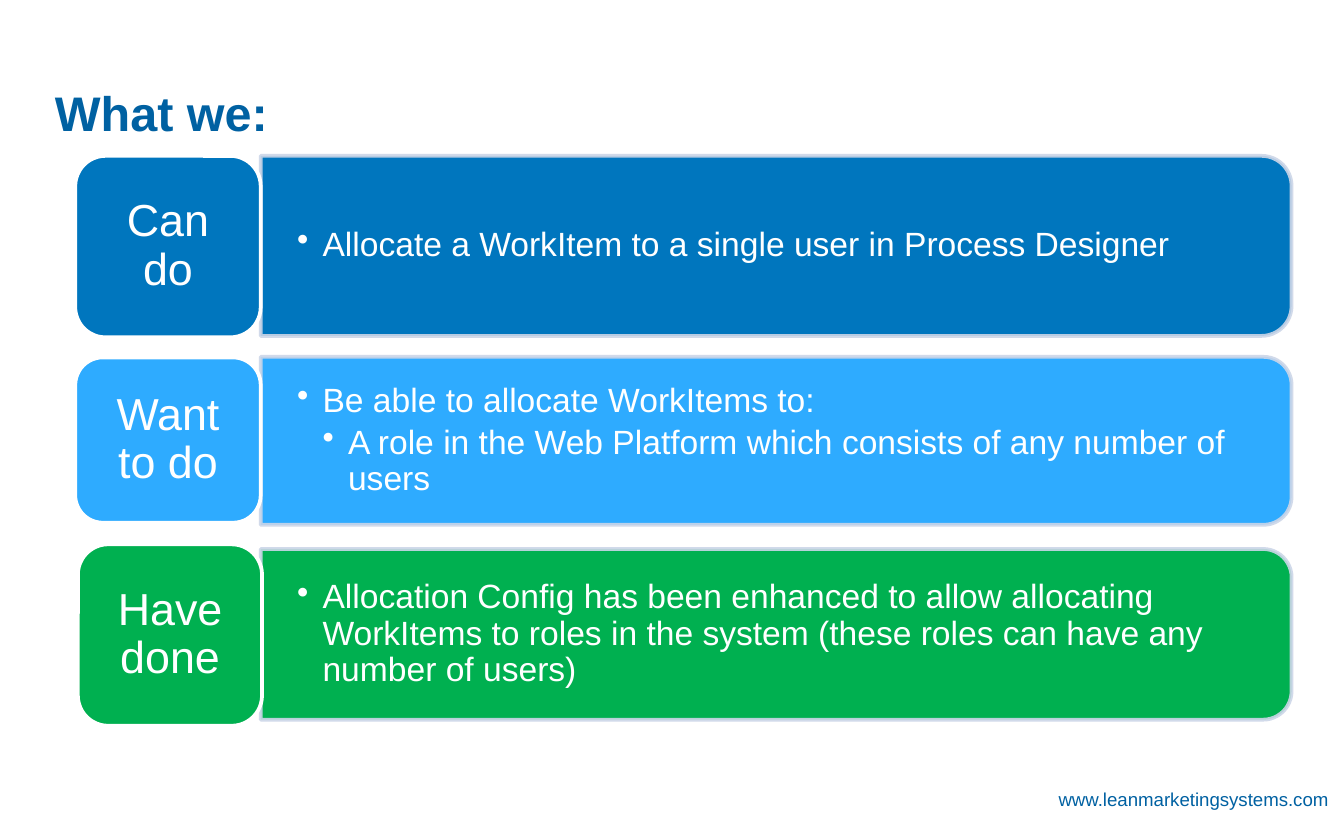
from dataclasses import dataclass

from lxml.etree import SubElement
from pptx import Presentation
from pptx.dml.color import RGBColor
from pptx.enum.shapes import MSO_SHAPE
from pptx.enum.text import MSO_ANCHOR, PP_ALIGN
from pptx.oxml.ns import qn
from pptx.util import Inches, Pt

NAVY = RGBColor(0x00, 0x61, 0xA2)
BLUE = RGBColor(0x00, 0x76, 0xBE)
SKY = RGBColor(0x2E, 0xAB, 0xFF)
GREEN = RGBColor(0x00, 0xB0, 0x50)
PALE = RGBColor(0xCC, 0xD6, 0xE8)
WHITE = RGBColor(0xFF, 0xFF, 0xFF)

BAR_LEFT, BAR_WIDTH = 1.94, 7.67
STEP = 0.19
INSET = 0.06


@dataclass
class Box:
    left: float
    top: float
    width: float
    height: float

    def shrink(self, gap: float) -> "Box":
        return Box(self.left + gap, self.top + gap, self.width - 2 * gap, self.height - 2 * gap)

    def sizes(self) -> list:
        return [Inches(n) for n in (self.left, self.top, self.width, self.height)]


@dataclass
class Row:
    name: str
    lines: list[str]
    color: RGBColor
    tab: Box
    middle: float
    height: float


def add_text(slide, box: Box, lines: list[str], *, size: int, color: RGBColor,
             bold: bool = False, align=PP_ALIGN.LEFT, anchor=MSO_ANCHOR.MIDDLE,
             wrap: bool = True, bullet: bool = False, tight: bool = False,
             pad: tuple[float, float] = (0.1, 0.05)) -> None:
    frame = slide.shapes.add_textbox(*box.sizes()).text_frame
    frame.word_wrap = wrap
    frame.vertical_anchor = anchor
    frame.margin_left = frame.margin_right = Inches(pad[0])
    frame.margin_top = frame.margin_bottom = Inches(pad[1])
    for level, line in enumerate(lines):
        para = frame.paragraphs[0] if level == 0 else frame.add_paragraph()
        para.alignment = align
        if tight:
            para.line_spacing = 0.9
        if bullet:
            para.level = level + 1
            para.space_after = Pt(3)
            props = para._p.get_or_add_pPr()
            props.set("marL", str(Inches(STEP * (level + 1))))
            props.set("indent", str(Inches(-STEP)))
            SubElement(props, qn("a:buChar"), char="•")
        run = para.add_run()
        run.text = line
        font = run.font
        font.name, font.size, font.bold = "Arial", Pt(size), bold
        font.color.rgb = color


def add_block(slide, kind: MSO_SHAPE, box: Box, fill: RGBColor, line: RGBColor):
    shape = slide.shapes.add_shape(kind, *box.sizes())
    shape.shadow.inherit = False
    shape.fill.solid()
    shape.fill.fore_color.rgb = fill
    shape.line.color.rgb = line
    shape.line.width = Pt(2)
    return shape


def add_row(slide, row: Row) -> None:
    center = BAR_LEFT + BAR_WIDTH / 2
    upright = Box(center - row.height / 2, row.middle - BAR_WIDTH / 2, row.height, BAR_WIDTH)
    bar = add_block(slide, MSO_SHAPE.ROUND_2_SAME_RECTANGLE, upright, row.color, PALE)
    bar.rotation = 90
    tint = bar.line.fill._xPr.find(qn("a:solidFill"))[0]
    SubElement(tint, qn("a:alpha"), val="90000")
    body = Box(BAR_LEFT, row.middle - row.height / 2 + INSET, 7.6, row.height - 2 * INSET)
    add_text(slide, body, row.lines, size=18, color=WHITE, bullet=True, tight=True,
             pad=(0.27, 0.14))
    add_block(slide, MSO_SHAPE.ROUNDED_RECTANGLE, row.tab, row.color, WHITE)
    add_text(slide, row.tab.shrink(INSET), [row.name], size=24, color=WHITE,
             align=PP_ALIGN.CENTER, tight=True)


ROWS = [
    Row("Can do", ["Allocate a WorkItem to a single user in Process Designer"],
        BLUE, Box(0.56, 1.16, 1.38, 1.35), 1.83, 1.34),
    Row("Want to do", ["Be able to allocate WorkItems to:",
                       "A role in the Web Platform which consists of any number of users"],
        SKY, Box(0.56, 2.66, 1.38, 1.23), 3.28, 1.25),
    Row("Have done", ["Allocation Config has been enhanced to allow allocating WorkItems "
                      "to roles in the system (these roles can have any number of users)"],
        GREEN, Box(0.58, 4.05, 1.37, 1.35), 4.72, 1.27),
]


def main() -> None:
    deck = Presentation()
    deck.slide_width, deck.slide_height = Inches(10), Inches(6.25)
    slide = deck.slides.add_slide(deck.slide_layouts[6])
    add_text(slide, Box(7.76, 5.81, 2.24, 0.27), ["www.leanmarketingsystems.com"],
             size=10, color=NAVY, align=PP_ALIGN.CENTER, anchor=MSO_ANCHOR.TOP, wrap=False)
    add_text(slide, Box(0.31, 0.51, 9.39, 0.65), ["What we:"], size=26, color=NAVY, bold=True)
    for row in ROWS:
        add_row(slide, row)
    deck.save("out.pptx")


if __name__ == "__main__":
    main()
